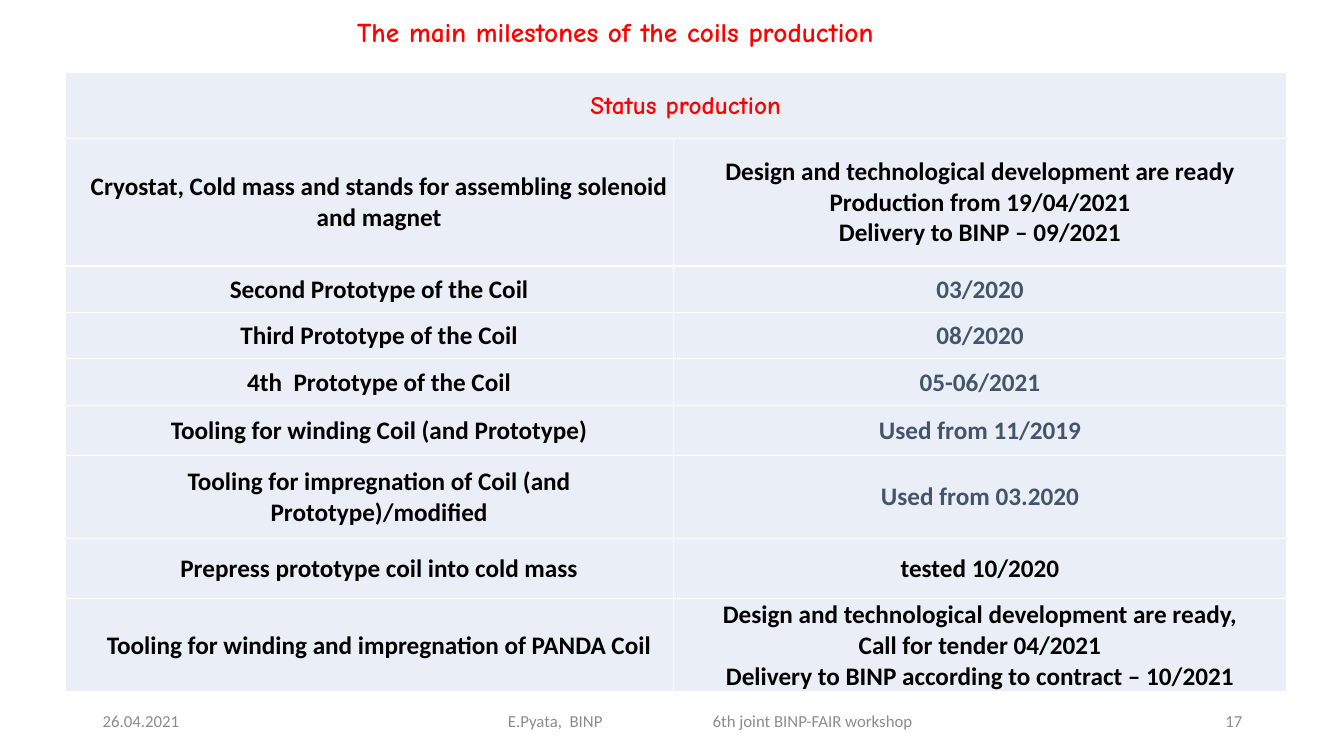
from lxml.etree import SubElement
from pptx import Presentation
from pptx.dml.color import RGBColor
from pptx.enum.text import MSO_ANCHOR as Anchor, MSO_AUTO_SIZE as AutoSize, PP_ALIGN as Align
from pptx.oxml.ns import qn
from pptx.util import Inches, Pt

RED, BLACK, SLATE, GREY, WHITE, PALE = "FF0000", "000000", "44546A", "8C8C8C", "FFFFFF", "EAEFF7"
BODY_FONT, HEADING_FONT = "Calibri", "Comic Neue"

TITLE = "The main milestones of the coils production "
HEADER = "Status production"
HEADER_HEIGHT = 0.65
# row height, item, status lines, status colour
MILESTONES = [
    (1.27, "Cryostat, Cold mass and stands for assembling solenoid and magnet",
     ["Design and technological development are ready", "Production from 19/04/2021",
      "Delivery to BINP – 09/2021"], BLACK),
    (0.46, "Second Prototype of the Coil", ["03/2020"], SLATE),
    (0.46, "Third Prototype of the Coil", ["08/2020"], SLATE),
    (0.46, "4th  Prototype of the Coil", ["05-06/2021"], SLATE),
    (0.5, "Tooling for winding Coil (and Prototype)", ["Used from 11/2019"], SLATE),
    (0.82, "Tooling for impregnation of Coil (and Prototype)/modified", ["Used from 03.2020"], SLATE),
    (0.6, "Prepress prototype coil into cold mass", ["tested 10/2020"], BLACK),
    (0.92, "Tooling for winding and impregnation of PANDA Coil",
     ["Design and technological development are ready,", "Call for tender 04/2021",
      "Delivery to BINP according to contract – 10/2021"], BLACK),
]
COLUMN_WIDTHS = [6.03, 6.08]
TABLE_LEFT, TABLE_TOP = 0.65, 0.72
# left, width, text, alignment
FOOTERS = [
    (0.92, 3, "26.04.2021", Align.LEFT),
    (4.94, 1.6, "E.Pyata,  BINP", Align.LEFT),
    (6.97, 2.4, "6th joint BINP-FAIR workshop", Align.LEFT),
    (9.42, 3, "17", Align.RIGHT),
]
FOOTER_TOP, FOOTER_HEIGHT = 6.95, 0.4


def color(value):
    return RGBColor.from_string(value)


def write(frame, lines, size, ink, font=BODY_FONT, bold=False, align=Align.CENTER):
    for index, line in enumerate(lines):
        paragraph = frame.add_paragraph() if index else frame.paragraphs[0]
        paragraph.alignment = align
        run = paragraph.add_run()
        run.text = line
        run.font.size, run.font.name, run.font.bold = Pt(size), font, bold
        run.font.color.rgb = color(ink)


def add_borders(cell):
    properties = cell._tc.get_or_add_tcPr()
    for position, side in enumerate(("lnL", "lnR", "lnT", "lnB")):
        line = SubElement(properties, qn(f"a:{side}"), w=str(Pt(1)))
        SubElement(SubElement(line, qn("a:solidFill")), qn("a:srgbClr"), val=WHITE)
        properties.insert(position, line)


def format_cell(cell, left_margin):
    cell.fill.solid()
    cell.fill.fore_color.rgb = color(PALE)
    cell.vertical_anchor = Anchor.MIDDLE
    cell.margin_left = Inches(left_margin)
    cell.margin_right = cell.margin_top = Inches(0.01)
    cell.margin_bottom = 0
    add_borders(cell)


def add_title(slide):
    title = slide.shapes.title
    title.left, title.top, title.width, title.height = map(Inches, (1.51, 0.16, 9.29, 0.4))
    frame = title.text_frame
    frame.auto_size, frame.vertical_anchor = AutoSize.NONE, Anchor.TOP
    write(frame, [TITLE], 19.5, RED, HEADING_FONT, True)
    frame.paragraphs[0].line_spacing = 0.8


def add_milestones(slide):
    heights = [HEADER_HEIGHT] + [milestone[0] for milestone in MILESTONES]
    frame = slide.shapes.add_table(
        len(heights), len(COLUMN_WIDTHS), Inches(TABLE_LEFT), Inches(TABLE_TOP),
        Inches(sum(COLUMN_WIDTHS)), Inches(sum(heights)))
    table = frame.table
    for column, width in zip(table.columns, COLUMN_WIDTHS):
        column.width = Inches(width)
    for row, height in zip(table.rows, heights):
        row.height = Inches(height)
        for cell, left_margin in zip(row.cells, (0.2, 0.01)):
            format_cell(cell, left_margin)

    header = table.cell(0, 0)
    header.merge(table.cell(0, 1))
    write(header.text_frame, [HEADER], 18, RED, HEADING_FONT, True)
    for index, (_, item, status, ink) in enumerate(MILESTONES, start=1):
        write(table.cell(index, 0).text_frame, [item], 18, BLACK, bold=True)
        write(table.cell(index, 1).text_frame, status, 18, ink, bold=True)


def add_footers(slide):
    for left, width, text, align in FOOTERS:
        box = slide.shapes.add_textbox(
            Inches(left), Inches(FOOTER_TOP), Inches(width), Inches(FOOTER_HEIGHT))
        frame = box.text_frame
        frame.word_wrap, frame.vertical_anchor = True, Anchor.MIDDLE
        write(frame, [text], 12, GREY, align=align)


def main():
    presentation = Presentation()
    presentation.slide_width, presentation.slide_height = Inches(13.33), Inches(7.5)
    slide = presentation.slides.add_slide(presentation.slide_layouts[5])
    add_title(slide)
    add_milestones(slide)
    add_footers(slide)
    presentation.save("out.pptx")


if __name__ == "__main__":
    main()
